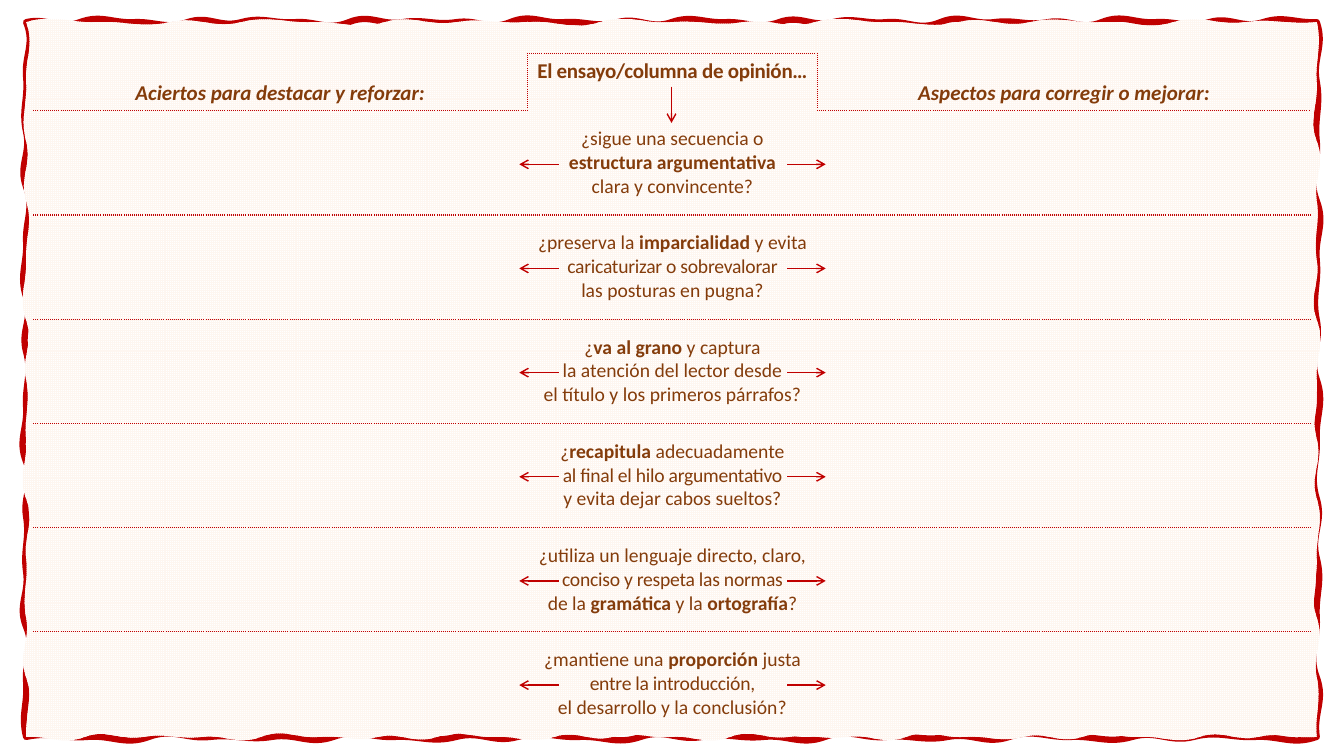
from math import sin

from lxml import etree
from pptx import Presentation
from pptx.dml.color import RGBColor
from pptx.enum.dml import MSO_PATTERN
from pptx.enum.shapes import MSO_CONNECTOR
from pptx.enum.text import MSO_ANCHOR, PP_ALIGN
from pptx.oxml import parse_xml
from pptx.oxml.ns import nsdecls, qn
from pptx.util import Inches, Pt

SMALL_GRID = MSO_PATTERN.SMALL_GRID
STRAIGHT = MSO_CONNECTOR.STRAIGHT
TOP, MIDDLE, BOTTOM = MSO_ANCHOR.TOP, MSO_ANCHOR.MIDDLE, MSO_ANCHOR.BOTTOM
CENTER = PP_ALIGN.CENTER
RED, BROWN = "C00000", "843C0B"
NO_STYLE = "{2D5ABB26-0587-4C30-8999-92F81FD0307C}"


def color(value):
    return RGBColor.from_string(value)


def write(cell, text, size=14, bold=False, italic=False, anchor=MIDDLE, tight=()):
    cell.vertical_anchor = anchor
    para = cell.text_frame.paragraphs[0]
    para.alignment = CENTER
    for number, line in enumerate(text.split("\n")):
        if number:
            para.add_line_break()
        for part, words in enumerate(line.split("**")):
            if words:
                span = para.add_run()
                span.text = words
                font = span.font
                font.name, font.size, font.italic = "Calibri", Pt(size), italic
                font.bold = bold or part % 2 == 1
                font.color.rgb = color(BROWN)
                if number in tight:
                    span._r.get_or_add_rPr().set("spc", "-20")


deck = Presentation()
deck.slide_width, deck.slide_height = Inches(13.33), Inches(7.5)
page = deck.slides.add_slide(deck.slide_layouts[6])
shapes = page.shapes

left, top, wide, high = 0.26, 0.22, 12.8, 7.09
corners = [(0, 0), (wide, 0), (wide, high), (0, high), (0, 0)]
builder = shapes.build_freeform(Inches(left), Inches(top))
builder.add_line_segments([(Inches(left + x), Inches(top + y)) for x, y in corners[1:4]], close=True)
border = builder.convert_to_shape()
border.shadow.inherit = False
border.line.color.rgb = color(RED)
border.line.width = Pt(4.5)
border.fill.patterned()
border.fill.pattern = SMALL_GRID
border.fill.fore_color.rgb = color("FEF6F0")
border.fill.back_color.rgb = color("FFFFFF")

outlines = border._element.spPr.find(qn("a:custGeom")).find(qn("a:pathLst"))
outlines.remove(outlines[0])
for hidden, counts, phase in (('fill="none"', (24, 12, 21, 13), 0), ('stroke="0"', (18, 12, 22, 12), 2)):
    curves = '<a:moveTo><a:pt x="0" y="0"/></a:moveTo>'
    for side, count in enumerate(counts):
        (x1, y1), (x2, y2) = corners[side:side + 2]
        step_x, step_y = (x2 - x1) / count, (y2 - y1) / count
        length = abs(step_x + step_y)
        swings = [0.05 + 0.04 * sin(2.3 * k + phase + side) for k in range(count + 1)]
        for k in range(count):
            curves += "<a:cubicBezTo>"
            for share, swing in ((k + 0.4, -swings[k]), (k + 0.6, swings[k + 1]), (k + 1, 0)):
                x = x1 + step_x * share - step_y / length * swing
                y = y1 + step_y * share + step_x / length * swing
                curves += f'<a:pt x="{Inches(x)}" y="{Inches(y)}"/>'
            curves += "</a:cubicBezTo>"
    outlines.append(parse_xml(f'<a:path {nsdecls("a")} w="{Inches(wide)}" h="{Inches(high)}" {hidden}>'
                              f'{curves}<a:close/></a:path>'))

questions = [
    ("¿sigue una secuencia o\n**estructura argumentativa**\nclara y convincente?", ()),
    ("¿preserva la **imparcialidad** y evita\ncaricaturizar o sobrevalorar\nlas posturas en pugna?", (1,)),
    ("¿**va al grano** y captura\nla atención del lector desde\nel título y los primeros párrafos?", ()),
    ("¿**recapitula** adecuadamente\nal final el hilo argumentativo\ny evita dejar cabos sueltos?", (1,)),
    ("¿utiliza un lenguaje directo, claro,\nconciso y respeta las normas\n"
     "de la **gramática** y la **ortografía**?", (1,)),
    ("¿mantiene una **proporción** justa\nentre la introducción,\nel desarrollo y la conclusión?", (1,)),
]
widths = [4.9, 1.16, 1.72, 3.47, 1.42]
pitch = (7.3 - 1.1) / len(questions)
heights = [0.24, 0.57] + [pitch] * len(questions)
frame = shapes.add_table(len(heights), len(widths), Inches(0.33), Inches(0.29),
                         Inches(sum(widths)), Inches(sum(heights)))
table = frame.table
table.first_row = table.horz_banding = False
table._tbl.tblPr.find(qn("a:tableStyleId")).text = NO_STYLE
for column, width in zip(table.columns, widths):
    column.width = Inches(width)
for row, height in zip(table.rows, heights):
    row.height = Inches(height)

top_edges = [["", "B", "B", "", ""], ["RB", "LT", "RT", "LB", "B"]]
for r in range(len(heights)):
    for c in range(len(widths)):
        cell = table.cell(r, c)
        cell.margin_left = cell.margin_right = Inches(0.05)
        cell.margin_top = cell.margin_bottom = Inches(0.05 if r else 0)
        if r < 2:
            edges = top_edges[r][c]
        else:
            edges = ("T" if r > 2 or c in (0, 3, 4) else "") + ("B" if r < len(heights) - 1 else "")
        if (r, c) == (1, 1):
            edges += "R"
        properties = cell._tc.get_or_add_tcPr()
        for edge in "LRTB":
            paint = f'<a:solidFill><a:srgbClr val="{RED}"/></a:solidFill><a:prstDash val="sysDot"/>'
            properties.append(parse_xml(
                f'<a:ln{edge} {nsdecls("a")} w="12700">{paint if edge in edges else "<a:noFill/>"}</a:ln{edge}>'))
        cell.fill.background()
        ending = etree.SubElement(cell.text_frame.paragraphs[0]._p, qn("a:endParaRPr"))
        ending.set("sz", "1000")
    if r:
        for start in (1, 3):
            table.cell(r, start).merge(table.cell(r, start + 1))

write(table.cell(1, 0), "Aciertos para destacar y reforzar:", size=15, bold=True, italic=True, anchor=BOTTOM)
write(table.cell(1, 1), "El ensayo/columna de opinión…", size=15, bold=True, anchor=TOP, tight=(0,))
write(table.cell(1, 3), "Aspectos para corregir o mejorar:", size=15, bold=True, italic=True, anchor=BOTTOM)
for r, (question, tight) in enumerate(questions, start=2):
    write(table.cell(r, 1), question, tight=tight)

arrows = [(6.66, 0.86, 6.66, 1.22)]
for start, end in ((7.81, 8.19), (5.54, 5.15)):
    for index in range(len(questions)):
        y = 1.63 + pitch * index
        arrows.append((start, y, end, y))
for ends in arrows:
    arrow = shapes.add_connector(STRAIGHT, *(Inches(value) for value in ends))
    arrow.line.color.rgb = color(RED)
    arrow.line.width = Pt(1)
    etree.SubElement(arrow.line._get_or_add_ln(), qn("a:tailEnd")).set("type", "arrow")
    etree.SubElement(arrow._element.spPr, qn("a:effectLst"))

deck.save("out.pptx")
